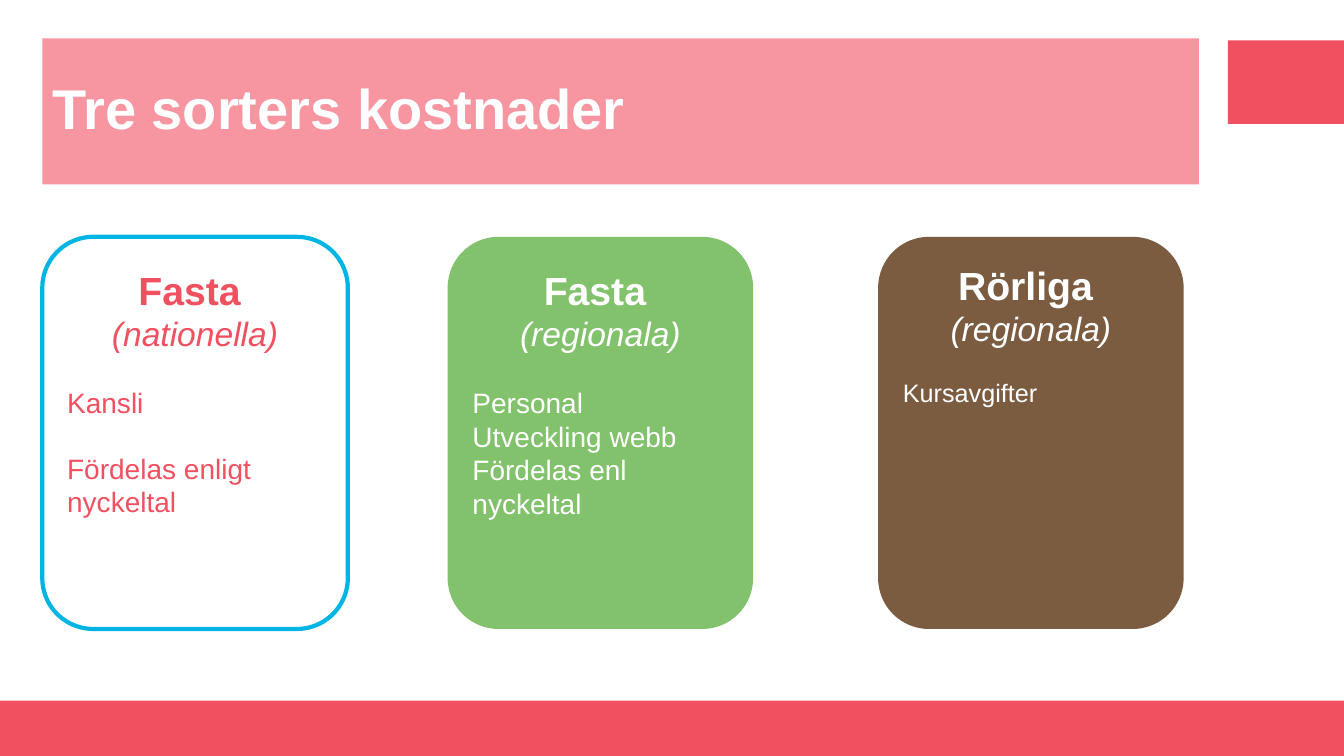
from pptx import Presentation
from pptx import util as u
from pptx.dml.color import RGBColor
from pptx.enum import shapes, text

RED = RGBColor(0xF1, 0x50, 0x60)
PINK = RGBColor(0xF7, 0x96, 0xA0)
GREEN = RGBColor(0x83, 0xC2, 0x6D)
BROWN = RGBColor(0x7B, 0x5C, 0x41)
BLUE = RGBColor(0x00, 0xB4, 0xE4)
WHITE = RGBColor(0xFF, 0xFF, 0xFF)

WIDTH, HEIGHT = u.Inches(13.33), u.Inches(7.5)
COL, ROW = WIDTH / 100, HEIGHT / 100
MARGIN = 3.15
CARD_TOP, CARD_W, CARD_H = 31.33, 22.73, 51.87
LINE = 1.15

CARDS = [
    (33.31, GREEN, WHITE, None, "Fasta ", "(regionala)", 20, 0.14,
     [("Personal", 0), ("Utveckling webb", 0), ("Fördelas enl nyckeltal", 0)]),
    (65.34, BROWN, WHITE, None, "Rörliga ", "(regionala)", 18, 0.09,
     [("Kursavgifter", 0)]),
    (MARGIN, WHITE, RED, BLUE, "Fasta ", "(nationella)", 20, 0.14,
     [("Kansli", 0), ("Fördelas enligt nyckeltal", 1)]),
]


def add_block(s, box, fill, line=None, kind=shapes.MSO_SHAPE.RECTANGLE):
    """Add a filled shape in a box given as column, row, columns and rows."""
    x, y, w, h = box
    sp = s.shapes.add_shape(kind, int(x * COL), int(y * ROW), int(w * COL), int(h * ROW))
    sp.shadow.inherit = False
    sp.fill.solid()
    sp.fill.fore_color.rgb = fill
    if line is None:
        sp.line.fill.background()
    else:
        sp.line.color.rgb = line
        sp.line.width = u.Pt(3)
    sp.text_frame.word_wrap = True
    return sp


def write(p, words, size, color, bold=False, italic=False, align=text.PP_ALIGN.LEFT):
    """Fill a paragraph with one formatted run."""
    p.text = words
    p.alignment = align
    font = p.runs[0].font
    font.name, font.size, font.bold, font.italic = "Arial", u.Pt(size), bold, italic
    font.color.rgb = color


def add_frame(s):
    """Add the footer band and the corner tab."""
    add_block(s, (0, 92.67, 100, 7.33), RED)
    add_block(s, (91.37, 5.33, 8.63, 11.07), RED)


def add_title(s, box, words):
    """Add the title band with its heading."""
    tf = add_block(s, box, PINK).text_frame
    tf.vertical_anchor = text.MSO_ANCHOR.MIDDLE
    write(tf.paragraphs[0], words, 40, WHITE, bold=True)
    tf.paragraphs[0].line_spacing = 0.9


def add_card(s, box, fill, color, line, heading, scope, size, inset, items):
    """Add a rounded cost card; each item carries its gap in empty lines."""
    sp = add_block(s, box, fill, line, shapes.MSO_SHAPE.FLOWCHART_ALTERNATE_PROCESS)
    tf = sp.text_frame
    tf.vertical_anchor = text.MSO_ANCHOR.TOP
    tf.margin_top = u.Inches(inset)
    center = text.PP_ALIGN.CENTER
    write(tf.paragraphs[0], heading, 28, color, bold=True, align=center)
    write(tf.add_paragraph(), scope, 24, color, italic=True, align=center)
    for i, (words, gap) in enumerate(items):
        p = tf.add_paragraph()
        write(p, words, size, color)
        p.space_before = u.Pt((gap or i == 0) * size * LINE)


def main():
    """Build and save the slide."""
    prs = Presentation()
    prs.slide_width, prs.slide_height = WIDTH, HEIGHT
    s = prs.slides.add_slide(prs.slide_layouts[6])
    add_frame(s)
    add_title(s, (MARGIN, 5.07, 86.05, 19.33), "Tre sorters kostnader")
    for left, *card in CARDS:
        add_card(s, (left, CARD_TOP, CARD_W, CARD_H), *card)
    prs.save("out.pptx")


if __name__ == "__main__":
    main()
